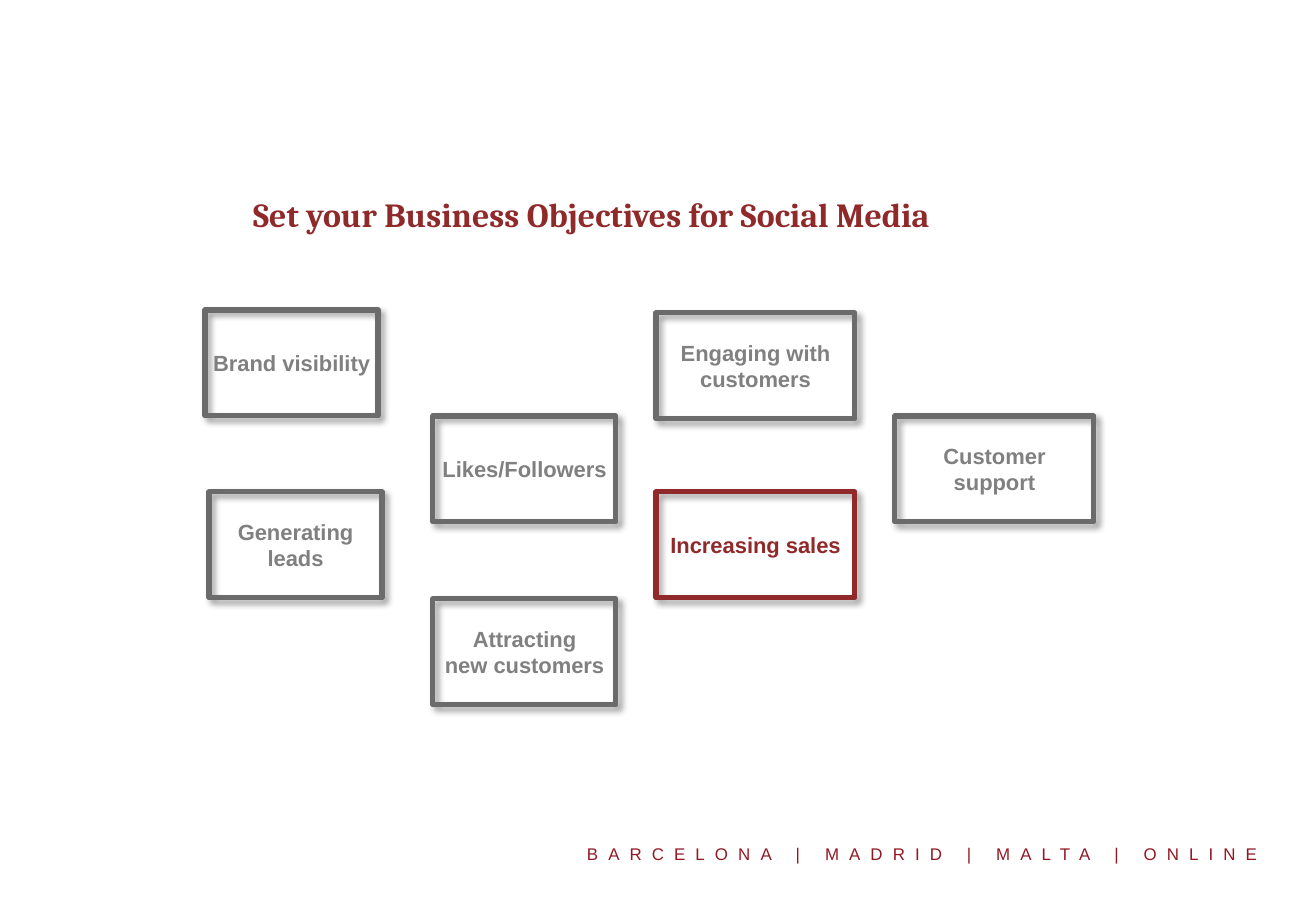
"""Build the slide of business objectives for social media."""
import dataclasses

import lxml.etree
import pptx
import pptx.dml.color
import pptx.enum.shapes
import pptx.enum.text
import pptx.oxml.ns
import pptx.util

EMU_PER_PX = 914400 / 121.5
ANCHOR = pptx.enum.text.MSO_ANCHOR
ALIGN = pptx.enum.text.PP_ALIGN


@dataclasses.dataclass(frozen=True)
class Theme:
    accent: str = "90292A"
    footer: str = "921824"
    frame: str = "6B6B6B"
    label: str = "808080"
    shadow: str = "000000"
    heading_font: str = "Cambria"
    body_font: str = "Arial"
    title_size: int = 20
    label_size: int = 13
    footer_size: int = 10
    frame_width: int = 3


def px(length):
    return pptx.util.Emu(round(length * EMU_PER_PX))


def rgb(colour):
    return pptx.dml.color.RGBColor.from_string(colour)


def add_xml(parent, tag, **attributes):
    return lxml.etree.SubElement(parent, pptx.oxml.ns.qn(tag), attributes)


class ObjectivesSlide:
    def __init__(self, presentation, theme):
        self.theme = theme
        self.slide = presentation.slides.add_slide(presentation.slide_layouts[5])

    def set_text(self, frame, lines, font, size, colour, bold, align):
        frame.text = "\n".join(lines)
        for paragraph in frame.paragraphs:
            paragraph.alignment = align
            paragraph.font.name = font
            paragraph.font.size = pptx.util.Pt(size)
            paragraph.font.bold = bold
            paragraph.font.color.rgb = rgb(colour)

    def title(self, text, left, top, width, height):
        heading = self.slide.shapes.title
        heading.left, heading.top = px(left), px(top)
        heading.width, heading.height = px(width), px(height)
        heading.text_frame.auto_size = pptx.enum.text.MSO_AUTO_SIZE.NONE
        heading.text_frame.vertical_anchor = ANCHOR.TOP
        self.set_text(heading.text_frame, [text], self.theme.heading_font,
                      self.theme.title_size, self.theme.accent, True, ALIGN.CENTER)

    def frame(self, bounds, colour):
        box = self.slide.shapes.add_shape(
            pptx.enum.shapes.MSO_SHAPE.RECTANGLE, *bounds)
        box.fill.background()
        box.line.color.rgb = rgb(colour)
        box.line.width = pptx.util.Pt(self.theme.frame_width)
        box.shadow.inherit = False
        properties = box.element.spPr
        add_xml(properties.find(pptx.oxml.ns.qn("a:ln")), "a:round")
        effects = properties.find(pptx.oxml.ns.qn("a:effectLst"))
        shadow = add_xml(effects, "a:outerShdw", blurRad="50800", dist="38100",
                         dir="2700000", algn="tl", rotWithShape="0")
        tint = add_xml(shadow, "a:srgbClr", val=self.theme.shadow)
        add_xml(tint, "a:alpha", val="40000")

    def objective(self, lines, left, top, width, height, highlighted=False):
        theme = self.theme
        bounds = [px(length) for length in (left, top, width, height)]
        self.frame(bounds, theme.accent if highlighted else theme.frame)
        label = self.slide.shapes.add_textbox(*bounds).text_frame
        label.word_wrap = True
        label.vertical_anchor = ANCHOR.MIDDLE
        label.margin_left = label.margin_right = 0
        label.margin_top = label.margin_bottom = 0
        self.set_text(label, lines, theme.body_font, theme.label_size,
                      theme.accent if highlighted else theme.label, True,
                      ALIGN.CENTER)

    def footer(self, text, left, top, width, height):
        cities = self.slide.shapes.add_textbox(
            px(left), px(top), px(width), px(height)).text_frame
        cities.word_wrap = False
        self.set_text(cities, [text], self.theme.body_font, self.theme.footer_size,
                      self.theme.footer, False, ALIGN.LEFT)
        run = cities.paragraphs[0].runs[0]
        run._r.get_or_add_rPr().set("spc", "600")


def main():
    presentation = pptx.Presentation()
    presentation.slide_width = px(1316)
    presentation.slide_height = px(911)
    page = ObjectivesSlide(presentation, Theme())
    page.title("Set your Business Objectives for Social Media", 98, 188, 987, 89)

    box_height = 106
    objectives = [
        (["Brand visibility"], 205, 310, 173),
        (["Generating", "leads"], 209, 492, 173),
        (["Likes/Followers"], 433, 416, 183),
        (["Attracting", "new customers"], 433, 599, 183),
        (["Engaging with", "customers"], 656, 313, 199),
        (["Increasing sales"], 656, 492, 199),
        (["Customer", "support"], 895, 416, 199),
    ]
    for lines, left, top, width in objectives:
        page.objective(lines, left, top, width, box_height,
                       highlighted=lines == ["Increasing sales"])

    page.footer("BARCELONA | MADRID | MALTA | ONLINE", 575, 838, 716, 33)
    presentation.save("out.pptx")


if __name__ == "__main__":
    main()
